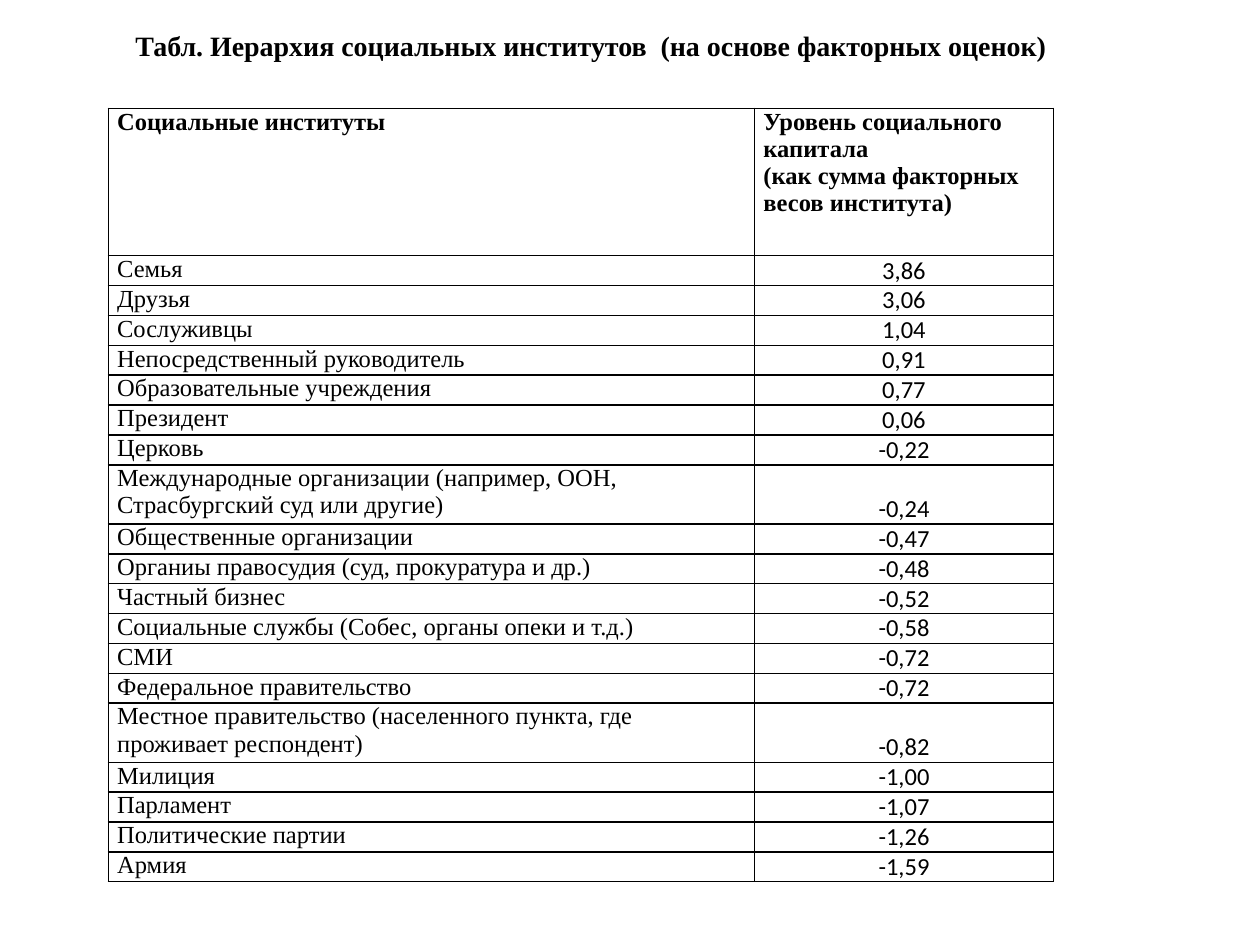
from pptx import Presentation
from pptx import util as u
from pptx.dml.color import RGBColor
from pptx.enum import text
from pptx.oxml import parse_xml
from pptx.oxml.ns import nsdecls

BLACK = RGBColor(0, 0, 0)
SERIF, SANS = "Times New Roman", "Calibri"
WIDTH, HEIGHT = u.Inches(10), u.Inches(7.5)

TITLE = "Табл. Иерархия социальных институтов  (на основе факторных оценок)"
HEADERS = [
    ["Социальные институты"],
    ["Уровень социального капитала", "(как сумма факторных весов института)"],
]
INSTITUTIONS = [
    ("Семья", "3,86"),
    ("Друзья", "3,06"),
    ("Сослуживцы", "1,04"),
    ("Непосредственный руководитель", "0,91"),
    ("Образовательные учреждения", "0,77"),
    ("Президент", "0,06"),
    ("Церковь", "-0,22"),
    ("Международные организации (например, ООН, Страсбургский суд или другие)", "-0,24"),
    ("Общественные организации", "-0,47"),
    ("Органиы правосудия (суд, прокуратура и др.)", "-0,48"),
    ("Частный бизнес", "-0,52"),
    ("Социальные службы (Собес, органы опеки и т.д.)", "-0,58"),
    ("СМИ", "-0,72"),
    ("Федеральное правительство", "-0,72"),
    ("Местное правительство (населенного пункта, где проживает респондент)", "-0,82"),
    ("Милиция", "-1,00"),
    ("Парламент", "-1,07"),
    ("Политические партии", "-1,26"),
    ("Армия", "-1,59"),
]
COLUMN_WIDTHS = [5.13, 2.37]
HEADER_HEIGHT, LINE_HEIGHT = 1.17, 0.235
LINE_CHARACTERS = 60  # longer names take two lines


def write(frame, lines, size, font=SERIF, bold=False, align=text.PP_ALIGN.LEFT):
    """Put each line in its own paragraph."""
    for number, line in enumerate(lines):
        para = frame.add_paragraph() if number else frame.paragraphs[0]
        para.alignment = align
        span = para.add_run()
        span.text = line
        span.font.size = u.Pt(size)
        span.font.name = font
        span.font.bold = bold
        span.font.color.rgb = BLACK


def add_title(page):
    box = page.shapes.title
    box.left = box.top = u.Inches(0.16)
    box.width, box.height = u.Inches(9.06), u.Inches(0.77)
    frame = box.text_frame
    frame.auto_size = text.MSO_AUTO_SIZE.NONE
    frame.vertical_anchor = text.MSO_ANCHOR.TOP
    frame.margin_top = u.Inches(0.07)
    write(frame, [TITLE], 16, bold=True, align=text.PP_ALIGN.CENTER)


def fill_cell(cell, lines, anchor=text.MSO_ANCHOR.TOP, **style):
    cell.margin_left = cell.margin_right = u.Inches(0.07)
    cell.margin_top = cell.margin_bottom = 0
    cell.vertical_anchor = anchor
    write(cell.text_frame, lines, 14, **style)
    # Borders come before the fill in the cell properties
    properties = cell._tc.get_or_add_tcPr()
    for side in ("lnL", "lnR", "lnT", "lnB"):
        properties.append(parse_xml(
            f'<a:{side} {nsdecls("a")} w="{u.Pt(1)}"><a:solidFill>'
            f'<a:srgbClr val="{BLACK}"/></a:solidFill></a:{side}>'))
    cell.fill.background()


def add_institutions(page):
    heights = [HEADER_HEIGHT] + [
        LINE_HEIGHT * (2 if len(name) > LINE_CHARACTERS else 1)
        for name, _ in INSTITUTIONS]
    table = page.shapes.add_table(
        len(heights), len(COLUMN_WIDTHS), u.Inches(0.86), u.Inches(0.86),
        u.Inches(sum(COLUMN_WIDTHS)), u.Inches(sum(heights))).table
    table.first_row = table.horz_banding = False
    for column, width in zip(table.columns, COLUMN_WIDTHS):
        column.width = u.Inches(width)
    for row, height in zip(table.rows, heights):
        row.height = u.Inches(height)

    # Header row
    for column, lines in enumerate(HEADERS):
        fill_cell(table.cell(0, column), lines, bold=True)

    # Names on the left, factor sums on the right
    for row, (name, level) in enumerate(INSTITUTIONS, start=1):
        fill_cell(table.cell(row, 0), [name])
        fill_cell(table.cell(row, 1), [level], text.MSO_ANCHOR.BOTTOM,
                  font=SANS, align=text.PP_ALIGN.CENTER)


def main():
    deck = Presentation()
    deck.slide_width, deck.slide_height = WIDTH, HEIGHT
    page = deck.slides.add_slide(deck.slide_layouts.get_by_name("Title Only"))
    add_title(page)
    add_institutions(page)
    deck.save("out.pptx")


if __name__ == "__main__":
    main()
